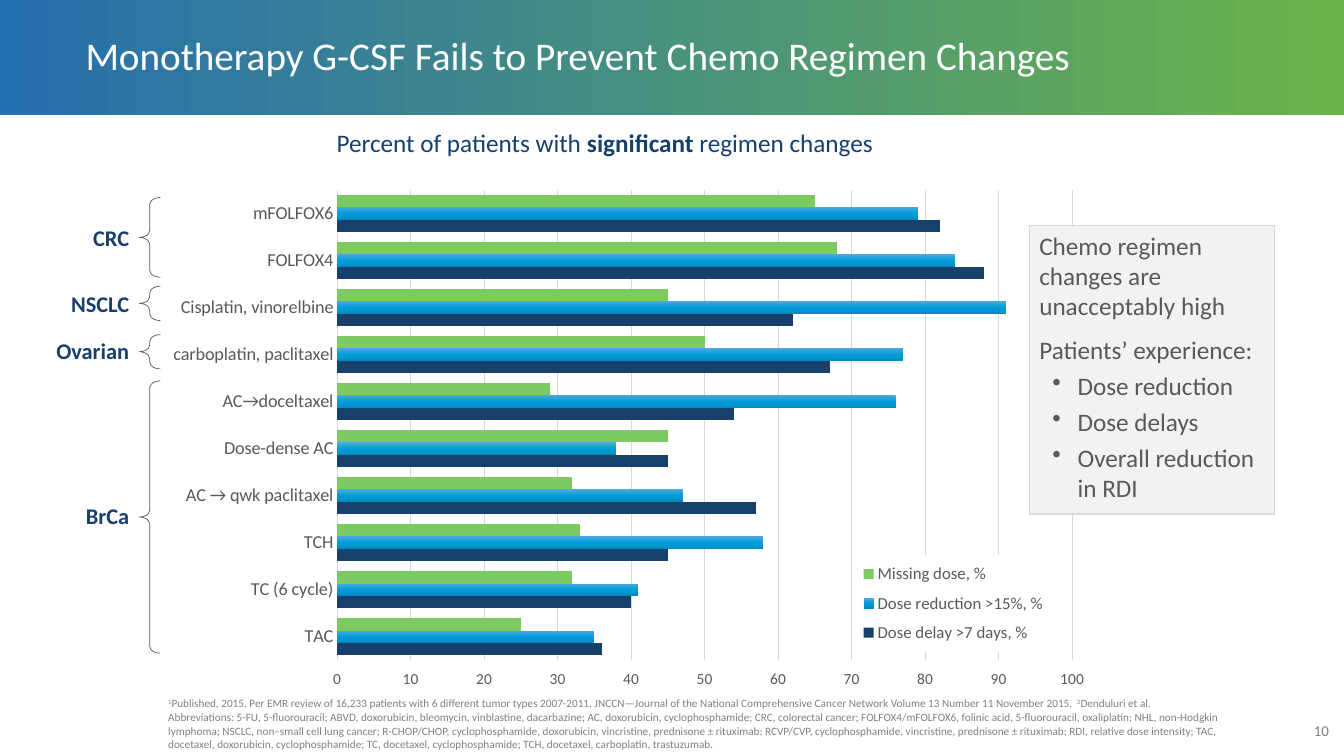
from copy import deepcopy
from dataclasses import dataclass

from lxml.etree import SubElement
from pptx import Presentation
from pptx.chart.chart import Chart
from pptx.chart.data import CategoryChartData
from pptx.dml.color import RGBColor
from pptx.dml.fill import FillFormat
from pptx.enum.chart import XL_CHART_TYPE, XL_LEGEND_POSITION, XL_TICK_MARK
from pptx.enum.shapes import MSO_SHAPE
from pptx.enum.text import MSO_ANCHOR, PP_ALIGN
from pptx.oxml import parse_xml
from pptx.oxml.ns import nsdecls, qn
from pptx.shapes.autoshape import Shape
from pptx.slide import Slide
from pptx.text.text import TextFrame
from pptx.util import Inches, Pt

Box = tuple[float, float, float, float]


@dataclass(frozen=True)
class Theme:
    face: str = "Calibri"
    navy: str = "17406D"
    green: str = "7CCA62"
    gray: str = "595959"
    pale: str = "808080"
    rule: str = "D9D9D9"
    panel: str = "F2F2F2"
    white: str = "FFFFFF"
    band: tuple = ((0, "266FAF"), (1, "6BB34B"))
    blue: tuple = ((0, "4BA8E0"), (0.5, "009DD9"), (1, "008CC1"))
    title: float = 28
    head: float = 18
    group: float = 16
    label: float = 13
    key: float = 12
    tick: float = 11
    page: float = 10.7
    note: float = 8


@dataclass(frozen=True)
class Run:
    text: str
    bold: bool = False
    raised: bool = False


@dataclass(frozen=True)
class Para:
    runs: tuple[Run, ...]
    before: float = 0
    bullet: bool = False


@dataclass(frozen=True)
class Group:
    name: str
    left: float
    top: float
    brace_top: float
    brace_height: float


@dataclass(frozen=True)
class Series:
    name: str
    values: tuple[int, ...]
    fill: str | tuple


T = Theme()

GROUPS = (
    Group("CRC", 0.57, 2.17, 1.96, 0.79),
    Group("NSCLC", 0.52, 2.83, 2.84, 0.34),
    Group("Ovarian", 0.34, 3.3, 3.32, 0.34),
    Group("BrCa", 0.57, 4.93, 3.78, 2.7),
)
BRACE_LEFT = 1.38

REGIMENS = ("TAC", "TC (6 cycle)", "TCH", "AC → qwk paclitaxel", "Dose-dense AC",
            "AC→doceltaxel", "carboplatin, paclitaxel", "Cisplatin, vinorelbine",
            "FOLFOX4", "mFOLFOX6")
SERIES = (
    Series("Dose delay >7 days, %", (36, 40, 45, 57, 45, 54, 67, 62, 88, 82), T.navy),
    Series("Dose reduction >15%, %", (35, 41, 58, 47, 38, 76, 77, 91, 84, 79), T.blue),
    Series("Missing dose, %", (25, 32, 33, 32, 45, 29, 50, 45, 68, 65), T.green),
)

SOURCE = (
    Run("1", raised=True),
    Run("Published, 2015. Per EMR review of 16,233 patients with 6 different tumor types "
        "2007-2011. JNCCN—Journal of the National Comprehensive Cancer Network Volume 13 "
        "Number 11 November 2015, "),
    Run("2", raised=True),
    Run("Denduluri et al."),
)
TERMS = (
    "Abbreviations: 5-FU, 5-fluorouracil; ABVD, doxorubicin, bleomycin, vinblastine, "
    "dacarbazine; AC, doxorubicin, cyclophosphamide; CRC, colorectal cancer; "
    "FOLFOX4/mFOLFOX6, folinic acid, 5-fluorouracil, oxaliplatin; NHL, non-Hodgkin "
    "lymphoma; NSCLC, non–small cell lung cancer; R-CHOP/CHOP, cyclophosphamide, "
    "doxorubicin, vincristine, prednisone ± rituximab; RCVP/CVP, cyclophosphamide, "
    "vincristine, prednisone ± rituximab; RDI, relative dose intensity; TAC, docetaxel, "
    "doxorubicin, cyclophosphamide; TC, docetaxel, cyclophosphamide; TCH, docetaxel, "
    "carboplatin, trastuzumab."
)


def rgb(code: str) -> RGBColor:
    return RGBColor.from_string(code)


def paint(fill: FillFormat, look: str | tuple, angle: float = 0) -> None:
    """Fill with one colour, or with a gradient of (position, colour) stops."""
    if isinstance(look, str):
        fill.solid()
        fill.fore_color.rgb = rgb(look)
        return
    fill.gradient()
    fill.gradient_angle = angle
    stops = fill.gradient_stops._gsLst
    while len(stops) < len(look):
        stops.append(deepcopy(stops[0]))
    for stop, (place, code) in zip(fill.gradient_stops, look):
        stop.position = place
        stop.color.rgb = rgb(code)


def write(frame: TextFrame, text: str | tuple[Para, ...], *, size: float, color: str,
          bold: bool = False, align: PP_ALIGN = PP_ALIGN.LEFT,
          anchor: MSO_ANCHOR = MSO_ANCHOR.TOP, spacing: float | None = None) -> None:
    paras = (Para((Run(text),)),) if isinstance(text, str) else text
    frame.word_wrap = True
    frame.vertical_anchor = anchor
    for i, item in enumerate(paras):
        para = frame.add_paragraph() if i else frame.paragraphs[0]
        para.alignment = align
        para.space_before = Pt(item.before)
        if spacing:
            para.line_spacing = spacing
        if item.bullet:
            props = para._p.get_or_add_pPr()
            props.set("marL", str(Inches(0.38)))
            props.set("indent", str(Inches(-0.25)))
            SubElement(props, qn("a:buChar")).set("char", "•")
        for part in item.runs:
            run = para.add_run()
            run.text = part.text
            font = run.font
            font.name, font.size, font.bold = T.face, Pt(size), bold or part.bold
            font.color.rgb = rgb(color)
            if part.raised:
                font._rPr.set("baseline", "28000")


def add_text(slide: Slide, box: Box, text: str | tuple[Para, ...], **style) -> None:
    frame = slide.shapes.add_textbox(*map(Inches, box)).text_frame
    write(frame, text, **style)


def add_shape(slide: Slide, kind: MSO_SHAPE, box: Box, *, fill: str | tuple | None = None,
              line: str | None = None, width: float = 0.75) -> Shape:
    shape = slide.shapes.add_shape(kind, *map(Inches, box))
    shape.shadow.inherit = False
    if fill:
        paint(shape.fill, fill)
    else:
        shape.fill.background()
    if line:
        shape.line.color.rgb = rgb(line)
        shape.line.width = Pt(width)
    else:
        shape.line.fill.background()
    return shape


def layout(box: Box, inner: bool = False):
    """Build a manual chart layout from fractions of the chart's size."""
    target = '<c:layoutTarget val="inner"/>' if inner else ""
    modes = '<c:xMode val="edge"/><c:yMode val="edge"/>'
    sizes = "".join(f'<c:{key} val="{part}"/>' for key, part in zip("xywh", box))
    return parse_xml(f'<c:layout {nsdecls("c")}><c:manualLayout>{target}{modes}{sizes}'
                     "</c:manualLayout></c:layout>")


def style_axes(chart: Chart) -> None:
    names, scale = chart.category_axis, chart.value_axis
    for axis, size in ((names, T.label), (scale, T.tick)):
        font = axis.tick_labels.font
        font.name, font.size = T.face, Pt(size)
        font.color.rgb = rgb(T.gray)
    names.major_tick_mark = XL_TICK_MARK.NONE
    names.format.line.color.rgb = rgb(T.rule)
    names.format.line.width = Pt(1)
    scale.minimum_scale, scale.maximum_scale, scale.major_unit = 0, 100, 10
    scale.tick_labels.number_format = "0"
    scale.tick_labels.number_format_is_linked = False
    scale.format.line.fill.background()
    grid = scale.major_gridlines.format.line
    grid.color.rgb, grid.width = rgb(T.rule), Pt(0.75)


def style_legend(chart: Chart) -> None:
    chart.has_legend = True
    legend = chart.legend
    legend.position = XL_LEGEND_POSITION.BOTTOM
    legend.include_in_layout = False
    font = legend.font
    font.name, font.size, font.color.rgb = T.face, Pt(T.key), rgb(T.gray)
    root = legend._element
    for old in root.findall(qn("c:layout")):
        root.remove(old)
    root.find(qn("c:legendPos")).addnext(layout((0.736, 0.705, 0.205, 0.175)))
    root.find(qn("c:overlay")).addnext(parse_xml(
        f'<c:spPr {nsdecls("c", "a")}><a:solidFill><a:srgbClr val="{T.white}"/>'
        "</a:solidFill></c:spPr>"))


def add_bars(slide: Slide, box: Box) -> None:
    data = CategoryChartData(number_format="0")
    data.categories = REGIMENS
    for item in SERIES:
        data.add_series(item.name, item.values)
    chart = slide.shapes.add_chart(XL_CHART_TYPE.BAR_CLUSTERED, *map(Inches, box), data).chart
    chart.has_title = False
    chart.font.name, chart.font.size = T.face, Pt(10)
    plot = chart.plots[0]
    plot.gap_width, plot.overlap, plot.vary_by_categories = 80, 0, False
    for bars, item in zip(plot.series, SERIES):
        paint(bars.format.fill, item.fill, angle=270)
    style_axes(chart)
    style_legend(chart)
    area = chart._chartSpace.chart.plotArea
    for old in area.findall(qn("c:layout")):
        area.remove(old)
    area.insert(0, layout((0.204, 0.048, 0.757, 0.847), inner=True))


def add_group(slide: Slide, group: Group) -> None:
    add_text(slide, (group.left, group.top, BRACE_LEFT - group.left, 0.37), group.name,
             size=T.group, color=T.navy, bold=True, align=PP_ALIGN.RIGHT)
    brace = add_shape(slide, MSO_SHAPE.LEFT_BRACE,
                      (BRACE_LEFT, group.brace_top, 0.21, group.brace_height),
                      line=T.gray, width=0.5)
    brace.adjustments[0] = 0.32


def add_panel(slide: Slide) -> None:
    panel = add_shape(slide, MSO_SHAPE.RECTANGLE, (10.21, 2.24, 2.43, 2.86),
                      fill=T.panel, line=T.rule)
    frame = panel.text_frame
    frame.margin_top, frame.margin_bottom = Inches(0.04), 0
    points = ("Dose reduction", "Dose delays", "Overall reduction in RDI")
    write(frame, (
        Para((Run("Chemo regimen changes are unacceptably high"),)),
        Para((Run("Patients’ experience:"),), before=10),
        *(Para((Run(point),), before=4, bullet=True) for point in points),
    ), size=T.head, color=T.gray)


def main() -> None:
    deck = Presentation()
    deck.slide_width, deck.slide_height = Inches(13.33), Inches(7.5)
    slide = deck.slides.add_slide(deck.slide_layouts[6])
    add_shape(slide, MSO_SHAPE.RECTANGLE, (0, 0, 13.33, 1.14), fill=T.band)
    add_text(slide, (12.72, 7.11, 0.56, 0.28), "10", size=T.page, color=T.pale,
             align=PP_ALIGN.RIGHT)
    add_text(slide, (0.75, 0, 11.5, 1.14), "Monotherapy G-CSF Fails to Prevent Chemo Regimen Changes",
             size=T.title, color=T.white, anchor=MSO_ANCHOR.MIDDLE, spacing=0.9)
    add_text(slide, (1.57, 6.72, 10.9, 0.78), (Para(SOURCE), Para((Run(TERMS),), before=1)),
             size=T.note, color=T.pale, anchor=MSO_ANCHOR.BOTTOM)
    add_text(slide, (3.24, 1.21, 8.17, 0.4), (Para((
        Run("Percent of patients with "), Run("significant", bold=True),
        Run(" regimen changes"))),), size=T.head, color=T.navy)
    add_bars(slide, (1.38, 1.62, 9.63, 5.51))
    for group in GROUPS:
        add_group(slide, group)
    add_panel(slide)
    deck.save("out.pptx")


if __name__ == "__main__":
    main()
